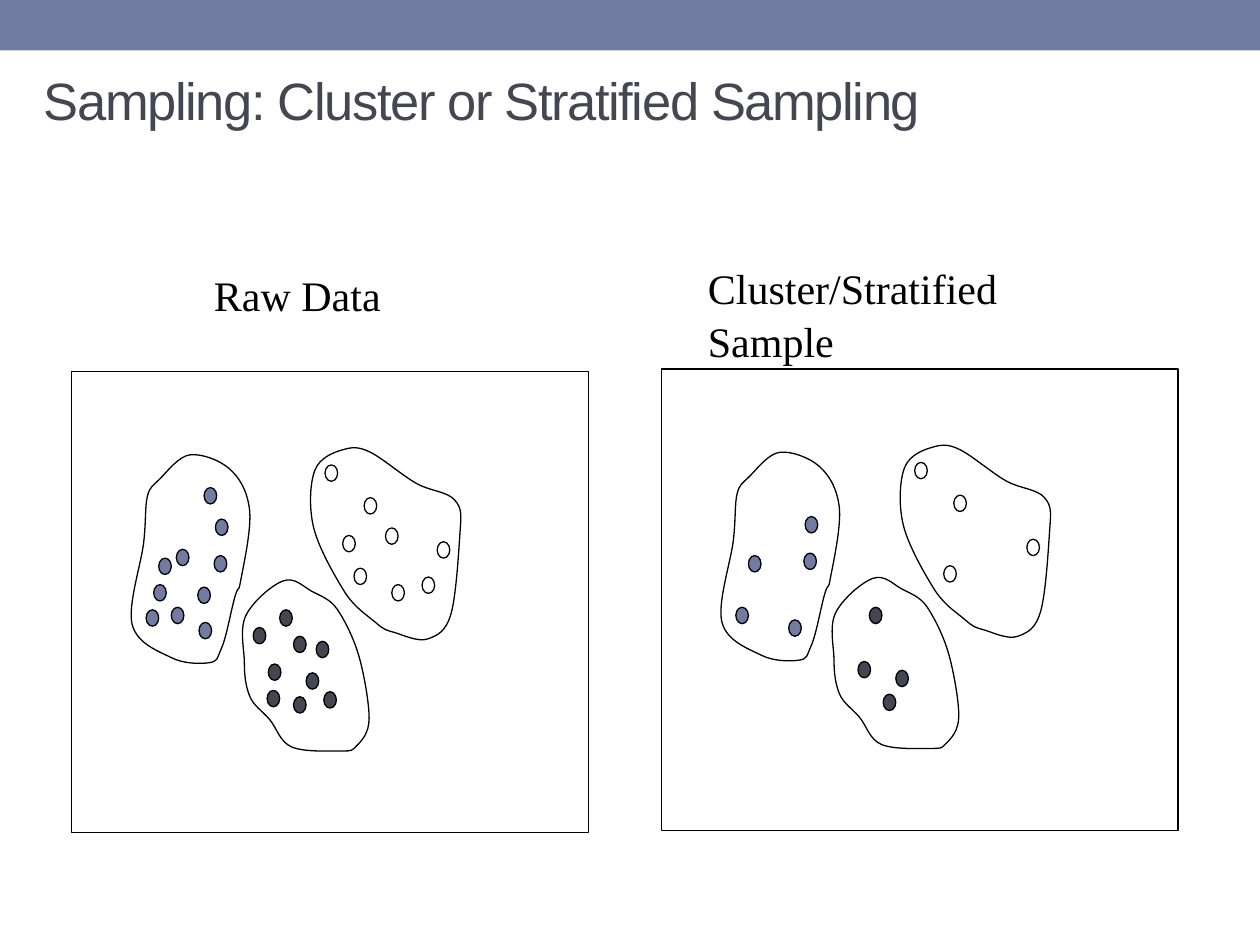
from dataclasses import dataclass

from lxml import etree
from pptx import Presentation
from pptx.dml.color import RGBColor
from pptx.enum.shapes import MSO_SHAPE
from pptx.enum.text import MSO_ANCHOR
from pptx.oxml.ns import qn
from pptx.util import Pt

RECTANGLE = MSO_SHAPE.RECTANGLE
DOT = MSO_SHAPE.FLOWCHART_CONNECTOR
TOP, MIDDLE = MSO_ANCHOR.TOP, MSO_ANCHOR.MIDDLE


@dataclass(frozen=True)
class Theme:
    blue: RGBColor = RGBColor(0x72, 0x7C, 0xA3)
    dark: RGBColor = RGBColor(0x46, 0x46, 0x53)
    white: RGBColor = RGBColor(0xFF, 0xFF, 0xFF)
    black: RGBColor = RGBColor(0, 0, 0)
    title_font: str = "Arial"
    label_font: str = "Times New Roman"
    title_size: float = 30
    label_size: float = 24
    line_width: float = 0.75


THEME = Theme()
UNIT = 0.72  # points per step of the drawing grid used inside the panels
DOT_SIZE = (10, 13)
PANEL = (57, 295, 410, 366)

# Each cluster: colour, dots kept in the sample, other dots, and the points
# that its smooth closed outline passes through.
CLUSTERS = [
    (THEME.white,
     [(289, 395), (281, 451), (347, 430), (258, 369)],
     [(306, 419), (272, 425), (335, 458), (311, 464)],
     [(361, 397), (365, 424), (358, 487), (340, 507), (313, 502), (298, 494),
      (273, 469), (249, 419), (250, 373), (272, 357), (294, 359), (331, 384)]),
    (THEME.dark,
     [(233, 553), (243, 534), (213, 527), (222, 484)],
     [(201, 498), (251, 509), (212, 548), (233, 505), (257, 549)],
     [(214, 571), (198, 552), (194, 526), (195, 489), (225, 461), (247, 469),
      (268, 484), (285, 521), (293, 570), (283, 592), (271, 596), (232, 593)]),
    (THEME.blue,
     [(116, 484), (126, 443), (158, 494), (170, 441), (171, 412)],
     [(136, 482), (122, 464), (157, 466), (140, 436), (162, 387)],
     [(187, 472), (176, 514), (166, 526), (136, 522), (105, 496), (114, 431),
      (117, 394), (127, 380), (151, 361), (182, 372), (198, 404), (191, 461)]),
]


def style(shape, fill=None, line=None):
    shape.shadow.inherit = False
    if fill is None:
        shape.fill.background()
    else:
        shape.fill.solid()
        shape.fill.fore_color.rgb = fill
    if line is None:
        shape.line.fill.background()
    else:
        shape.line.color.rgb = line
        shape.line.width = Pt(THEME.line_width)


def add_text(box, text, font, size, color, anchor=TOP, spacing=1.0):
    frame = slide.shapes.add_textbox(*map(Pt, box)).text_frame
    frame.word_wrap = True
    frame.vertical_anchor = anchor
    paragraph = frame.paragraphs[0]
    paragraph.line_spacing = spacing
    run = paragraph.add_run()
    run.text = text
    run.font.name = font
    run.font.size = Pt(size)
    run.font.color.rgb = color
    return run


presentation = Presentation()
presentation.slide_width = Pt(720)
presentation.slide_height = Pt(540)
slide = presentation.slides.add_slide(presentation.slide_layouts[6])

# Top band and title
band = slide.shapes.add_shape(RECTANGLE, 0, 0, Pt(720), Pt(28.8))
style(band, THEME.blue)
title = add_text((18, 23.76, 684, 66.24), "Sampling: Cluster or Stratified Sampling",
                 THEME.title_font, THEME.title_size, THEME.dark, MIDDLE)
title.font._element.set("spc", "-80")

# Raw data panel on the left, sample panel on the right
for shift_x, shift_y, is_sample in [(0, 0, False), (468, -2, True)]:
    panel = slide.shapes.add_group_shape().shapes
    left, top, width, height = PANEL
    frame_box = (left + shift_x, top + shift_y, width, height)
    frame = panel.add_shape(RECTANGLE, *(Pt(value * UNIT) for value in frame_box))
    style(frame, line=THEME.black)

    for color, sampled, others, outline in CLUSTERS:
        for x, y in sampled if is_sample else sampled + others:
            dot_box = (x + shift_x, y + shift_y, *DOT_SIZE)
            dot = panel.add_shape(DOT, *(Pt(value * UNIT) for value in dot_box))
            style(dot, color, THEME.black)

        # Two control points and an end point per curve, from the neighbours
        curve_points = []
        count = len(outline)
        for index in range(count):
            before, start, end, after = (
                outline[(index + step) % count] for step in (-1, 0, 1, 2))
            curve_points += [
                tuple(s + (e - b) / 6 for b, s, e in zip(before, start, end)),
                tuple(e - (a - s) / 6 for s, e, a in zip(start, end, after)),
                end,
            ]
        builder = panel.build_freeform(*outline[0], scale=Pt(UNIT))
        builder.add_line_segments(curve_points, close=True)
        cluster = builder.convert_to_shape(Pt(shift_x * UNIT), Pt(shift_y * UNIT))
        style(cluster, line=THEME.black)

        # Turn every three straight segments into one Bezier curve
        segments = list(cluster._element.iter(qn("a:lnTo")))
        for first in range(0, count * 3, 3):
            curve = etree.Element(qn("a:cubicBezTo"))
            segments[first].addprevious(curve)
            for segment in segments[first:first + 3]:
                curve.append(segment[0])
                segment.getparent().remove(segment)

# Panel labels
for box, text in [
    ((115.2, 149.04, 130, 36), "Raw Data"),
    ((397.44, 144.72, 240, 64.8), "Cluster/Stratified Sample"),
]:
    add_text(box, text, THEME.label_font, THEME.label_size, THEME.black, spacing=1.06)

presentation.save("out.pptx")
